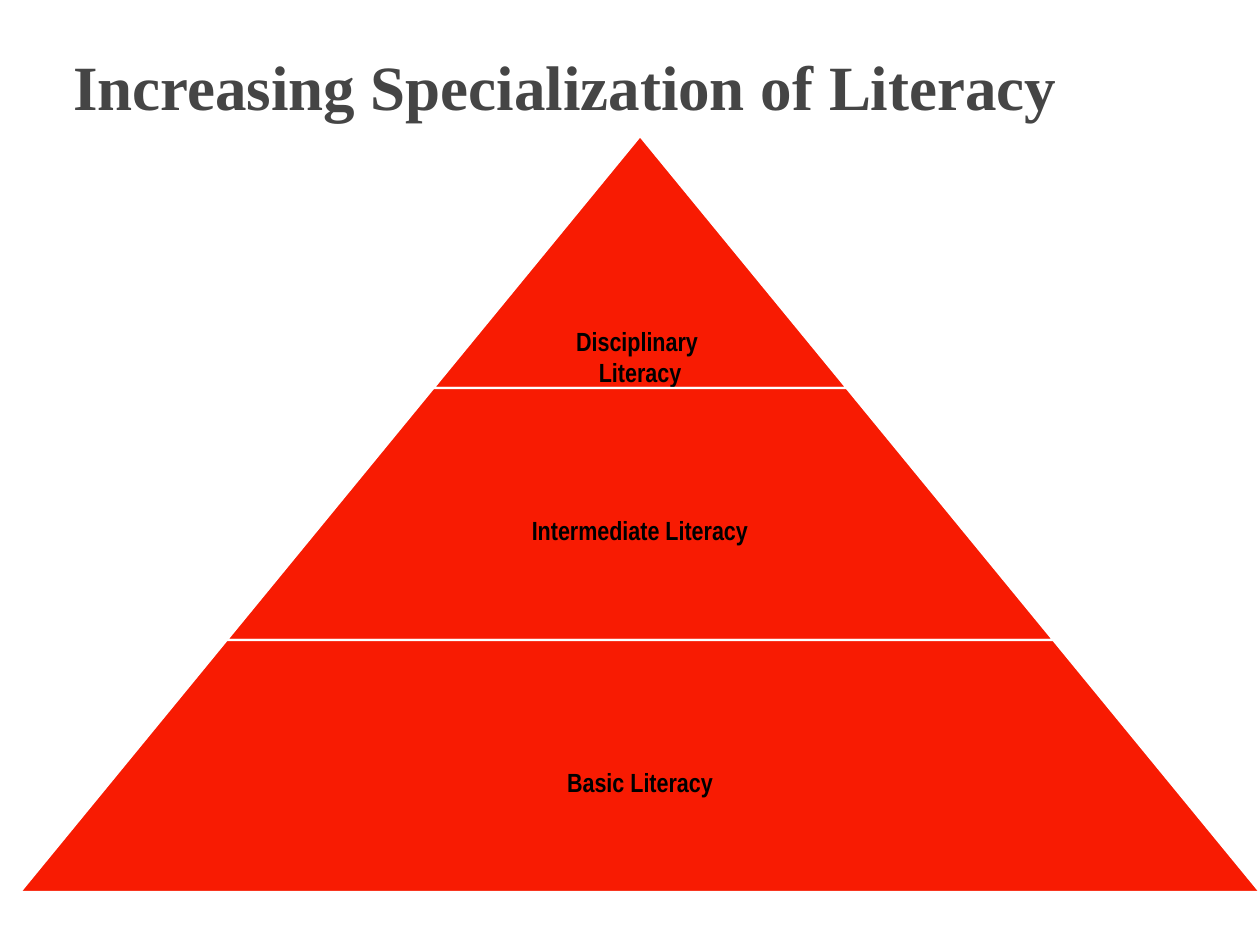
from dataclasses import dataclass

from pptx import Presentation
from pptx.dml.color import RGBColor
from pptx.enum.shapes import MSO_SHAPE
from pptx.enum.text import MSO_ANCHOR, PP_ALIGN
from pptx.util import Inches, Pt

TRAPEZOID = MSO_SHAPE.TRAPEZOID
TOP, MIDDLE = MSO_ANCHOR.TOP, MSO_ANCHOR.MIDDLE
LEFT, CENTER = PP_ALIGN.LEFT, PP_ALIGN.CENTER


@dataclass(frozen=True)
class Theme:
    level: str = "F81B02"
    divider: str = "FFFFFF"
    title: str = "454545"
    label: str = "000000"
    title_font: str = "Times New Roman"
    label_font: str = "Arial Narrow"
    title_size: int = 36
    label_size: int = 15


def write(tf, text, *, font, size, color, align=LEFT, anchor=TOP):
    """Fill a text frame, one paragraph for each line of text."""
    tf.word_wrap = True
    tf.vertical_anchor = anchor
    for i, line in enumerate(text.split("\n")):
        p = tf.add_paragraph() if i else tf.paragraphs[0]
        p.alignment = align
        r = p.add_run()
        r.text = line
        r.font.name, r.font.size, r.font.bold = font, Pt(size), True
        r.font.color.rgb = RGBColor.from_string(color)


class PyramidSlide:
    def __init__(self, prs, theme):
        self.theme = theme
        self.s = prs.slides.add_slide(prs.slide_layouts[5])

    def title(self, text, x, y, w, h):
        t, sp = self.theme, self.s.shapes.title
        sp.left, sp.top, sp.width, sp.height = map(Inches, (x, y, w, h))
        write(sp.text_frame, text, font=t.title_font, size=t.title_size,
              color=t.title)

    def level(self, x, y, w, h, slope):
        sp = self.s.shapes.add_shape(TRAPEZOID, *map(Inches, (x, y, w, h)))
        sp.adjustments[0] = slope
        sp.shadow.inherit = False
        sp.fill.solid()
        sp.fill.fore_color.rgb = RGBColor.from_string(self.theme.level)
        sp.line.color.rgb = RGBColor.from_string(self.theme.divider)
        sp.line.width = Pt(1.25)

    def label(self, text, x, y, w, h, drop):
        """Centre the text, lowered by drop inches."""
        t = self.theme
        tf = self.s.shapes.add_textbox(*map(Inches, (x, y, w, h))).text_frame
        tf.margin_left = tf.margin_right = tf.margin_bottom = Inches(0.02)
        tf.margin_top = Inches(0.02 + 2 * drop)
        write(tf, text, font=t.label_font, size=t.label_size, color=t.label,
              align=CENTER, anchor=MIDDLE)


def main():
    prs = Presentation()
    prs.slide_width, prs.slide_height = Inches(10), Inches(7.5)
    slide = PyramidSlide(prs, Theme())
    slide.title("Increasing Specialization of Literacy", 0.48, 0.33, 8.08, 0.7)

    # Pyramid levels, from the tip down: text, label width, label drop
    levels = [
        ("Disciplinary \nLiteracy", 3.28, 0.75),
        ("Intermediate Literacy", 4.26, 0.13),
        ("Basic Literacy", 6.39, 0.13),
    ]
    center, tip, height, slope = 5.08, 1.08, 2, 0.82
    for i, (text, label_w, drop) in enumerate(levels):
        y = tip + i * height
        w = 2 * slope * height * (i + 1)
        slide.level(center - w / 2, y, w, height, slope)
        slide.label(text, center - label_w / 2, y, label_w, height, drop)

    prs.save("out.pptx")


if __name__ == "__main__":
    main()
